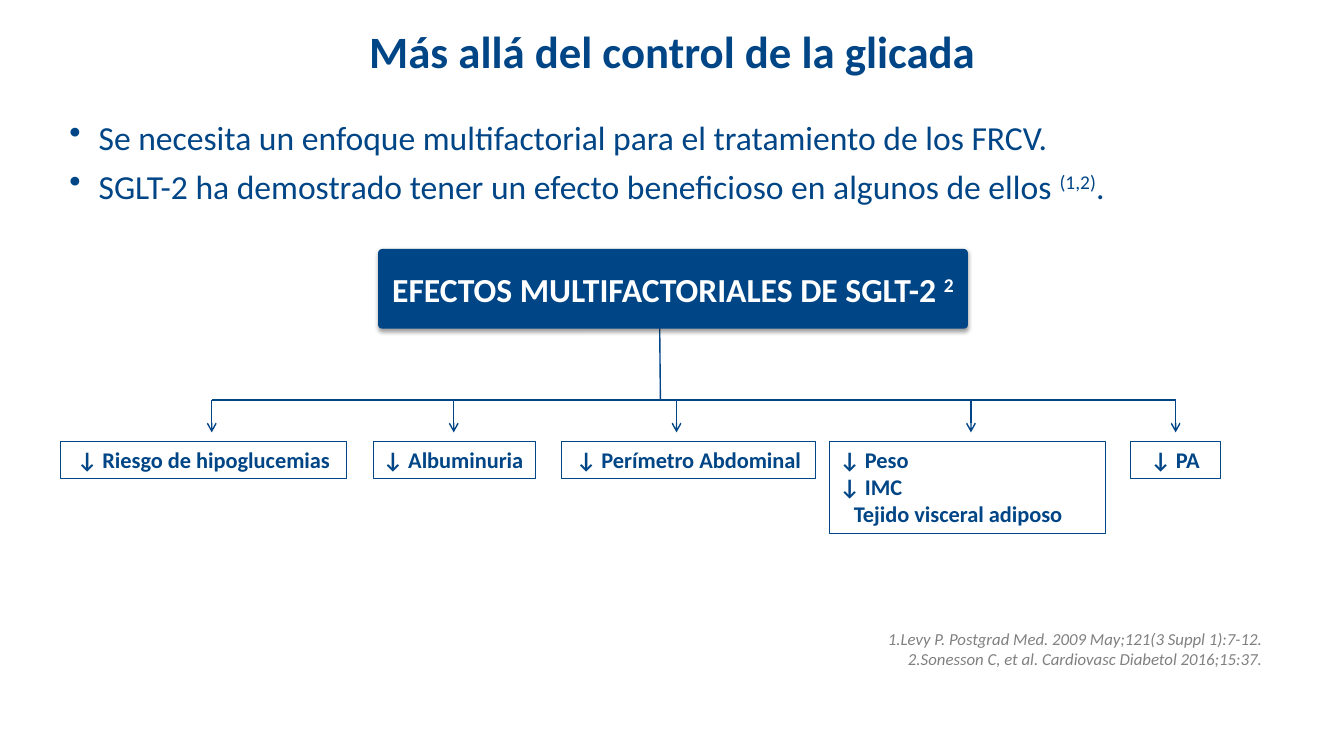
"""Build the slide on the effects of SGLT-2 beyond glycated haemoglobin."""
from lxml.etree import SubElement
from pptx import Presentation
from pptx.dml.color import RGBColor
from pptx.enum.shapes import MSO_CONNECTOR, MSO_SHAPE
from pptx.enum.text import MSO_ANCHOR as Anchor, MSO_AUTO_SIZE as AutoSize, PP_ALIGN as Align
from pptx.oxml.ns import qn
from pptx.util import Emu, Pt

NAVY = RGBColor(0x00, 0x45, 0x86)
GRAY = RGBColor(0x80, 0x80, 0x80)
WHITE = RGBColor(0xFF, 0xFF, 0xFF)
FONT = "Calibri"
PX = 9144
RAIL_Y, ARROW_END, EFFECT_Y = 397, 429, 438


def px(length):
    return Emu(length * PX)


class EffectsSlide:
    """Hold the slide and its style, and draw each kind of element."""

    def __init__(self, deck):
        self.slide = deck.slides.add_slide(deck.slide_layouts[5])
        self.shapes = self.slide.shapes

    def add_runs(self, paragraph, runs, size, color=NAVY, bold=False, italic=False):
        for text, raised in runs:
            run = paragraph.add_run()
            run.text = text
            font = run.font
            font.name, font.size, font.bold, font.italic = FONT, Pt(size), bold, italic
            font.color.rgb = color
            if raised:
                run._r.get_or_add_rPr().set("baseline", "30000")

    def paragraphs(self, frame, count):
        return [frame.paragraphs[0]] + [frame.add_paragraph() for _ in range(count - 1)]

    def title(self, text, box):
        title = self.shapes.title
        title.left, title.top, title.width, title.height = map(px, box)
        frame = title.text_frame
        frame.auto_size = AutoSize.NONE
        frame.vertical_anchor = Anchor.MIDDLE
        frame.paragraphs[0].alignment = Align.CENTER
        self.add_runs(frame.paragraphs[0], [(text, False)], 32, bold=True)

    def text_list(self, items, box, marker, margin=0, hanging=0, gap=0,
                  align=Align.LEFT, **style):
        frame = self.shapes.add_textbox(*map(px, box)).text_frame
        frame.word_wrap = True
        for index, (paragraph, runs) in enumerate(zip(self.paragraphs(frame, len(items)), items)):
            paragraph.alignment = align
            if index:
                paragraph.space_before = Pt(gap)
            props = paragraph._p.get_or_add_pPr()
            props.set("marL", str(px(margin)))
            props.set("indent", str(px(-hanging)))
            tag, attribute, value = marker
            SubElement(props, qn(tag)).set(attribute, value)
            self.add_runs(paragraph, runs, **style)

    def box(self, kind, box, fill=None, line=None):
        shape = self.shapes.add_shape(kind, *map(px, box))
        shape.shadow.inherit = False
        if fill is None:
            shape.fill.background()
        else:
            shape.fill.solid()
            shape.fill.fore_color.rgb = fill
        if line is None:
            shape.line.fill.background()
        else:
            shape.line.color.rgb = line
            shape.line.width = Pt(0.5)
        return shape

    def banner(self, runs, box):
        banner = self.box(MSO_SHAPE.ROUNDED_RECTANGLE, box, fill=NAVY)
        banner.adjustments[0] = 0.05
        effects = banner._element.spPr.find(qn("a:effectLst"))
        shadow = SubElement(effects, qn("a:outerShdw"), blurRad="40000", dist="20000",
                            dir="5400000", rotWithShape="0")
        shade = SubElement(shadow, qn("a:srgbClr"), val="000000")
        SubElement(shade, qn("a:alpha"), val="38000")
        frame = banner.text_frame
        frame.margin_left = frame.margin_right = frame.margin_top = frame.margin_bottom = 0
        frame.word_wrap = False
        frame.vertical_anchor = Anchor.MIDDLE
        frame.paragraphs[0].alignment = Align.CENTER
        self.add_runs(frame.paragraphs[0], runs, 24, WHITE, bold=True)

    def effect(self, lines, box, align):
        frame = self.box(MSO_SHAPE.RECTANGLE, box, line=NAVY).text_frame
        frame.word_wrap = True
        frame.auto_size = AutoSize.SHAPE_TO_FIT_TEXT
        frame.vertical_anchor = Anchor.TOP
        for paragraph, text in zip(self.paragraphs(frame, len(lines)), lines):
            paragraph.alignment = align
            if not text.startswith("↓"):
                paragraph._p.get_or_add_pPr().set("marL", str(px(14)))
            self.add_runs(paragraph, [(text, False)], 16, bold=True)

    def line(self, start, end, arrow=False):
        line = self.shapes.add_connector(MSO_CONNECTOR.STRAIGHT, *map(px, start + end))
        line.line.color.rgb = NAVY
        line.line.width = Pt(1)
        if arrow:
            SubElement(line.line._get_or_add_ln(), qn("a:tailEnd"), type="arrow")
        SubElement(line._element.spPr, qn("a:effectLst"))


def main():
    deck = Presentation()
    deck.slide_width, deck.slide_height = px(1333), px(750)
    page = EffectsSlide(deck)

    page.title("Más allá del control de la glicada", (67, 17, 1200, 66))
    page.text_list(
        [[("Se necesita un enfoque multifactorial para el tratamiento de los FRCV.", False)],
         [("SGLT-2 ha demostrado tener un efecto beneficioso en algunos de ellos ", False),
          ("(1,2)", True), (".", False)]],
        (0, 111, 1267, 110), ("a:buChar", "char", "•"),
        margin=88, hanging=29, gap=6, size=24)
    page.text_list(
        [[("Levy P. Postgrad Med. 2009 May;121(3 Suppl 1):7-12.", False)],
         [("Sonesson C, et al. Cardiovasc Diabetol 2016;15:37.", False)]],
        (0, 619, 1262, 51), ("a:buAutoNum", "type", "arabicPeriod"),
        align=Align.RIGHT, size=12, color=GRAY, italic=True)

    effects = [
        (["↓ Riesgo de hipoglucemias"], 60, 284, 37, 210, Align.CENTER),
        (["↓ Albuminuria"], 370, 161, 37, 450, Align.LEFT),
        (["↓ Perímetro Abdominal"], 557, 252, 37, 671, Align.CENTER),
        (["↓ Peso", "↓ IMC", "Tejido visceral adiposo"], 823, 273, 91, 963, Align.LEFT),
        (["↓ PA"], 1121, 89, 37, 1166, Align.CENTER),
    ]
    page.line((654, 292), (655, RAIL_Y))
    page.banner([("EFECTOS MULTIFACTORIALES DE SGLT-2 ", False), ("2", True)],
                (375, 247, 585, 79))
    page.line((effects[0][4], RAIL_Y), (effects[-1][4], RAIL_Y))
    for lines, left, width, height, arrow_x, align in effects:
        page.effect(lines, (left, EFFECT_Y, width, height), align)
        page.line((arrow_x, RAIL_Y), (arrow_x, ARROW_END), arrow=True)

    deck.save("out.pptx")


if __name__ == "__main__":
    main()
